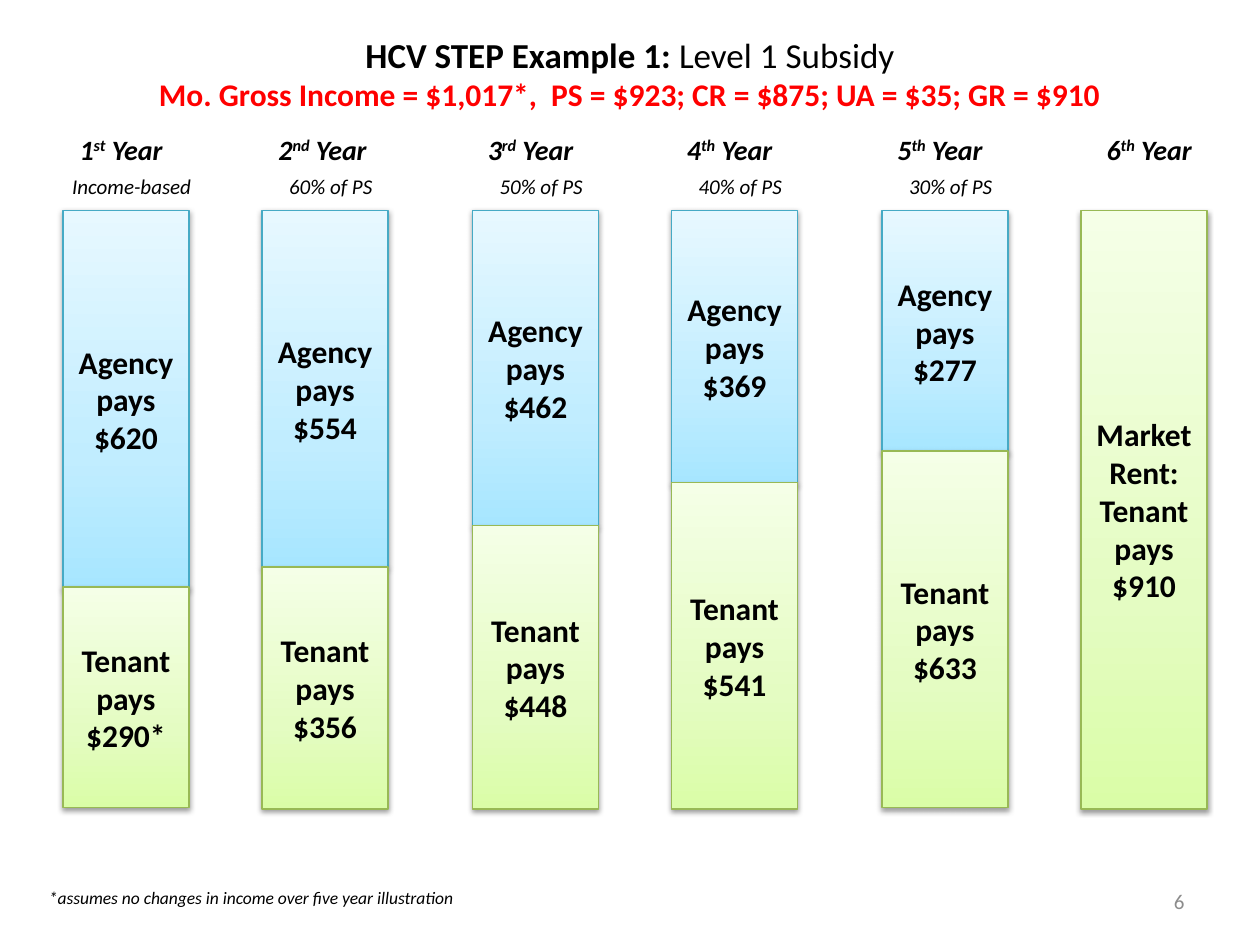
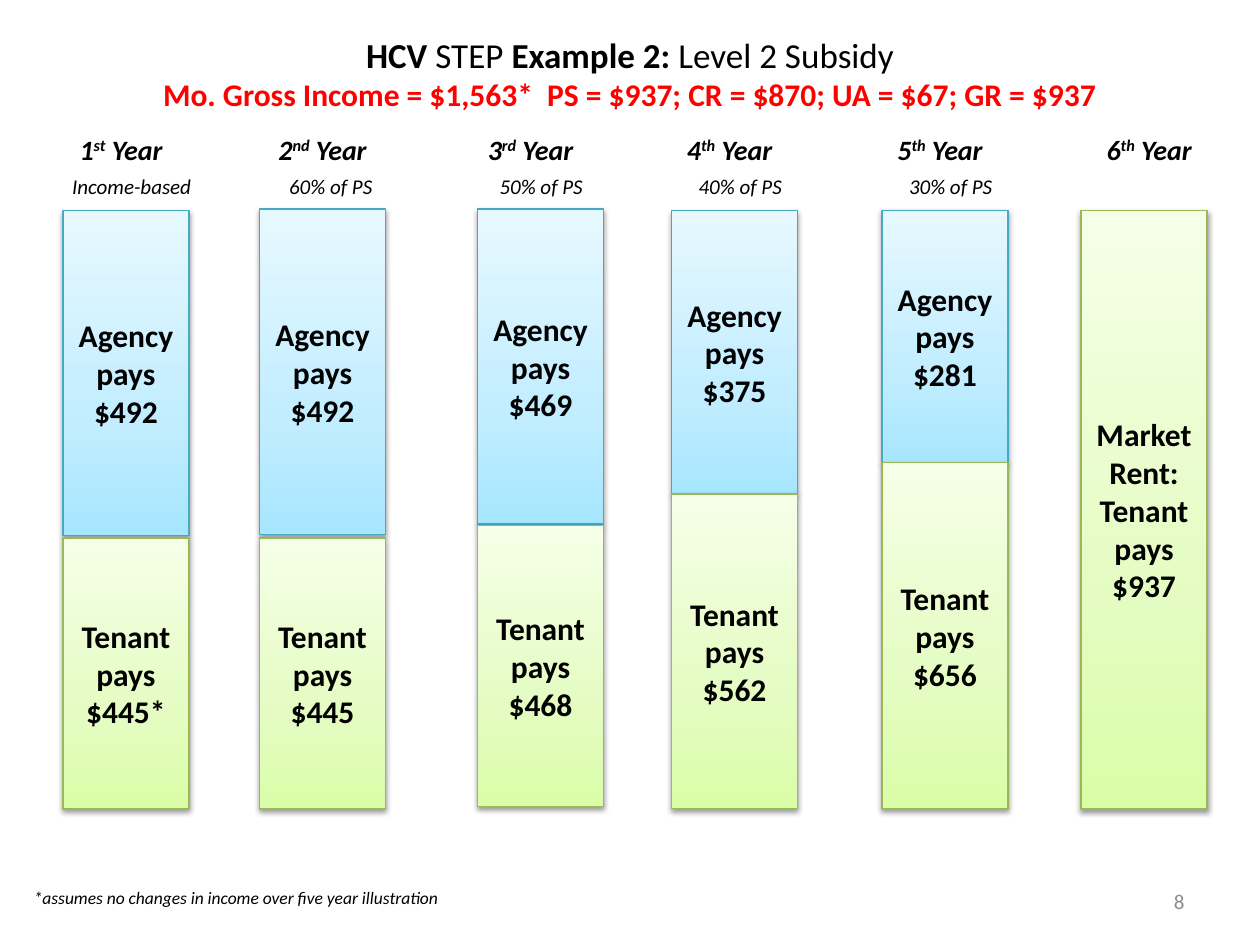
from copy import deepcopy
from dataclasses import dataclass

from lxml.etree import SubElement
from pptx import Presentation
from pptx.dml.color import RGBColor
from pptx.enum.shapes import MSO_SHAPE
from pptx.enum.text import MSO_ANCHOR, MSO_AUTO_SIZE, PP_ALIGN
from pptx.oxml.ns import qn
from pptx.util import Inches, Pt

# Shared look
FONT = "Calibri"
BLACK = RGBColor(0x00, 0x00, 0x00)
RED = RGBColor(0xFF, 0x00, 0x00)
GRAY = RGBColor(0x8C, 0x8C, 0x8C)
BLUE_LINE = RGBColor(0x46, 0xAA, 0xC5)
GREEN_LINE = RGBColor(0x98, 0xB9, 0x55)
BLUE_STOPS = [RGBColor(0xA7, 0xE6, 0xFF), RGBColor(0xC1, 0xED, 0xFF),
              RGBColor(0xE7, 0xF8, 0xFF)]
GREEN_STOPS = [RGBColor(0xDA, 0xFD, 0xA7), RGBColor(0xE4, 0xFC, 0xC2),
               RGBColor(0xF5, 0xFF, 0xE7)]
STOP_POSITIONS = [0, 35, 100]
BLUE = (BLUE_STOPS, BLUE_LINE)
GREEN = (GREEN_STOPS, GREEN_LINE)

# Shared columns
BAR_TOP, BAR_BOTTOM, BAR_WIDTH = 1.67, 6.42, 1
MARKET_LEFT = 8.58
YEAR_LEFTS = [0.17, 1.77, 3.42, 5, 6.67, 8.33]
ORDINALS = ["st", "nd", "rd", "th", "th", "th"]
CAPTION_LEFTS = [0.42, 2, 3.67, 5.25, 6.92]
CAPTIONS = ["Income-based", "60% of PS", "50% of PS", "40% of PS", "30% of PS"]
FOOTNOTE = "*assumes no changes in income over five year illustration"


@dataclass
class YearBar:
    left: float
    agency_height: float
    tenant_top: float
    agency_pays: str
    tenant_pays: str
    top: float = BAR_TOP
    bottom: float = BAR_BOTTOM


def add_run(p, text, size=12, bold=False, italic=False, color=BLACK, raised=False):
    r = p.add_run()
    r.text = text
    r.font.name = FONT
    r.font.size = Pt(size)
    r.font.bold = bold
    r.font.italic = italic
    r.font.color.rgb = color
    if raised:
        r.font._element.set("baseline", "30000")
    return r


def add_text(s, text, left, top, width, height, align=PP_ALIGN.CENTER,
             anchor=MSO_ANCHOR.TOP, **font):
    """Text box; text is a string or a list of (string, raised) runs."""
    box = s.shapes.add_textbox(Inches(left), Inches(top), Inches(width), Inches(height))
    tf = box.text_frame
    tf.word_wrap = True
    tf.vertical_anchor = anchor
    p = tf.paragraphs[0]
    p.alignment = align
    runs = [(text, False)] if isinstance(text, str) else text
    for part, raised in runs:
        add_run(p, part, raised=raised, **font)


def add_title(s, heading, figures):
    title = s.shapes.title
    title.left, title.top = Inches(0.25), Inches(0.08)
    title.width, title.height = Inches(9.5), Inches(1)
    tf = title.text_frame
    tf.auto_size = MSO_AUTO_SIZE.NONE
    tf.vertical_anchor = MSO_ANCHOR.MIDDLE
    p = tf.paragraphs[0]
    p.alignment = PP_ALIGN.CENTER
    for text, bold in heading:
        r = add_run(p, text, size=20, bold=bold)
    # The line break takes the size of the heading
    p.add_line_break()
    p._p[-1].append(deepcopy(r.font._element))
    add_run(p, figures, size=18, bold=True, color=RED)


def set_gradient(sp, stops):
    sp.fill.gradient()
    sp.fill.gradient_angle = 90
    gs_list = sp._element.spPr.find(qn("a:gradFill")).find(qn("a:gsLst"))
    for gs in list(gs_list):
        gs_list.remove(gs)
    for position, color in zip(STOP_POSITIONS, stops):
        gs = SubElement(gs_list, qn("a:gs"), pos=str(position * 1000))
        SubElement(gs, qn("a:srgbClr"), val=str(color))


def set_shadow(sp):
    sp.shadow.inherit = False
    effects = sp._element.spPr.find(qn("a:effectLst"))
    shadow = SubElement(effects, qn("a:outerShdw"), blurRad="40000", dist="20000",
                        dir="5400000", rotWithShape="0")
    color = SubElement(shadow, qn("a:srgbClr"), val=str(BLACK))
    SubElement(color, qn("a:alpha"), val="38000")


def add_block(s, left, top, height, label, amount, style):
    stops, line = style
    sp = s.shapes.add_shape(MSO_SHAPE.RECTANGLE, Inches(left), Inches(top),
                            Inches(BAR_WIDTH), Inches(height))
    set_gradient(sp, stops)
    sp.line.color.rgb = line
    sp.line.width = Pt(0.75)
    set_shadow(sp)
    tf = sp.text_frame
    tf.word_wrap = True
    tf.vertical_anchor = MSO_ANCHOR.MIDDLE
    for p, text in zip([tf.paragraphs[0], tf.add_paragraph()], [label, amount]):
        p.alignment = PP_ALIGN.CENTER
        add_run(p, text, size=18, bold=True)


def add_column_heads(s):
    for year, (left, ordinal) in enumerate(zip(YEAR_LEFTS, ORDINALS), start=1):
        add_text(s, [(str(year), False), (ordinal, True), (" Year", False)],
                 left, 1, 1.58, 0.37, size=16, bold=True, italic=True)
    for left, caption in zip(CAPTION_LEFTS, CAPTIONS):
        add_text(s, caption, left, 1.33, 1.25, 0.3, italic=True)


def add_example(prs, heading, figures, bars, rent, number, note_left):
    s = prs.slides.add_slide(prs.slide_layouts[5])
    add_title(s, heading, figures)
    add_column_heads(s)
    for bar in bars:
        add_block(s, bar.left, bar.top, bar.agency_height,
                  "Agency pays", bar.agency_pays, BLUE)
        add_block(s, bar.left, bar.tenant_top, bar.bottom - bar.tenant_top,
                  "Tenant pays", bar.tenant_pays, GREEN)
    add_block(s, MARKET_LEFT, BAR_TOP, BAR_BOTTOM - BAR_TOP,
              "Market Rent: Tenant pays", rent, GREEN)
    # Footer
    add_text(s, FOOTNOTE, note_left, 6.99, 8.92, 0.27,
             align=PP_ALIGN.LEFT, size=10, italic=True)
    add_text(s, number, 7.17, 6.95, 2.33, 0.4, align=PP_ALIGN.RIGHT,
             anchor=MSO_ANCHOR.MIDDLE, color=GRAY)


def main():
    prs = Presentation()
    prs.slide_width, prs.slide_height = Inches(10), Inches(7.5)

    # Level 1 subsidy
    add_example(
        prs,
        [("HCV STEP Example 1: ", True), ("Level 1 Subsidy", False)],
        "Mo. Gross Income = $1,017*,  PS = $923; CR = $875; UA = $35; GR = $910",
        [YearBar(0.5, 3, 4.66, "$620", "$290*", bottom=6.41),
         YearBar(2.08, 2.83, 4.5, "$554", "$356"),
         YearBar(3.75, 2.5, 4.17, "$462", "$448"),
         YearBar(5.33, 2.17, 3.83, "$369", "$541"),
         YearBar(7, 1.92, 3.58, "$277", "$633", bottom=6.41)],
        rent="$910", number="6", note_left=0.29)

    # Level 2 subsidy
    add_example(
        prs,
        [("HCV ", True), ("STEP ", False), ("Example 2: ", True),
         ("Level 2 Subsidy", False)],
        "Mo. Gross Income = $1,563*  PS = $937; CR = $870; UA = $67; GR = $937",
        [YearBar(0.5, 2.58, 4.27, "$492", "$445*"),
         YearBar(2.06, 2.58, 4.27, "$492", "$445", top=1.66),
         YearBar(3.79, 2.5, 4.17, "$469", "$468", top=1.66, bottom=6.4),
         YearBar(5.33, 2.25, 3.92, "$375", "$562"),
         YearBar(7, 2, 3.67, "$281", "$656")],
        rent="$937", number="8", note_left=0.17)

    prs.save("out.pptx")


if __name__ == "__main__":
    main()
